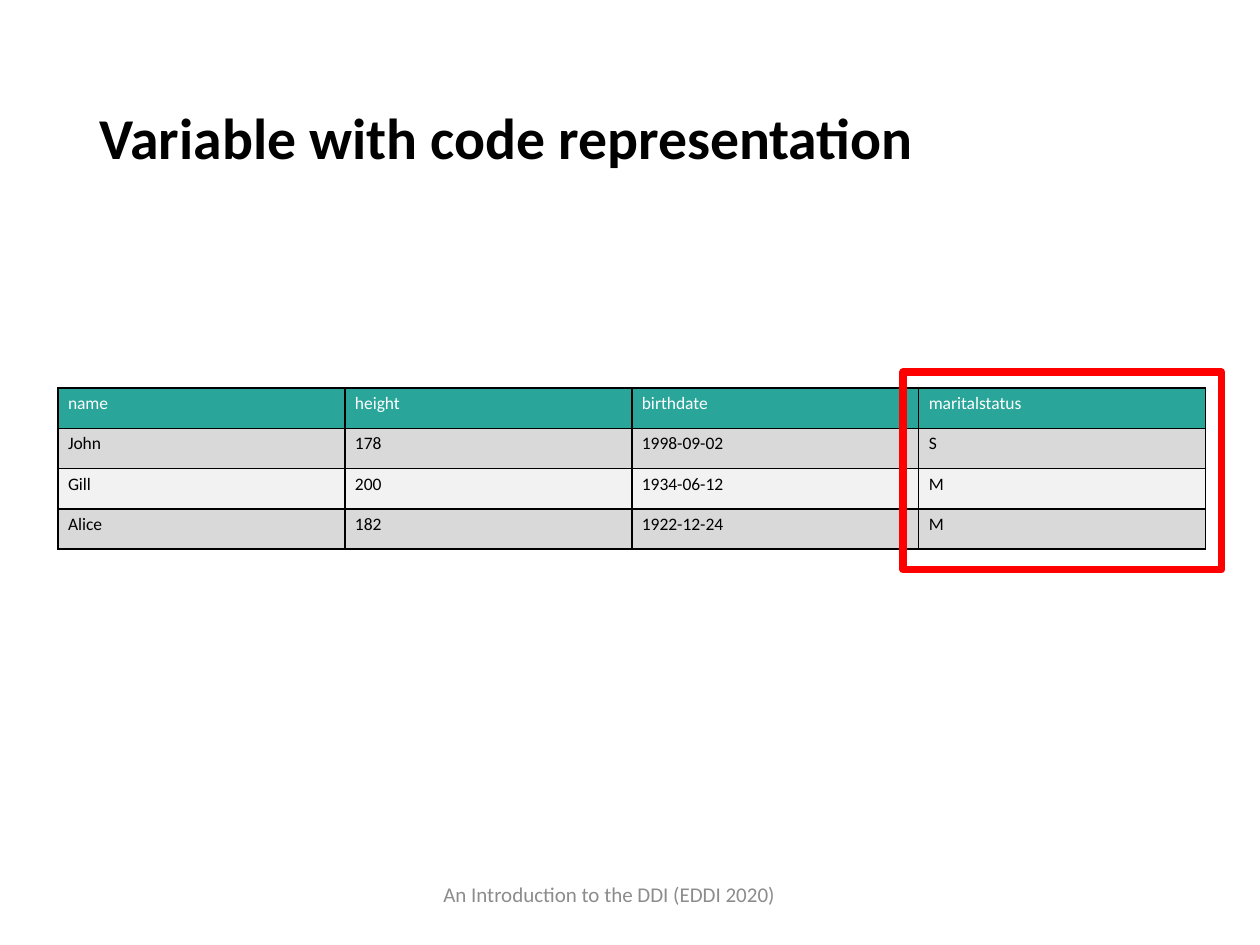
from typing import NamedTuple

from lxml import etree
from pptx import Presentation, util as u
from pptx.dml.color import RGBColor
from pptx.enum import shapes, text
from pptx.oxml import ns

BLACK = RGBColor(0x00, 0x00, 0x00)
WHITE = RGBColor(0xFF, 0xFF, 0xFF)
TEAL = RGBColor(0x29, 0xA5, 0x99)
DARK_BAND = RGBColor(0xD9, 0xD9, 0xD9)
LIGHT_BAND = RGBColor(0xF2, 0xF2, 0xF2)
RED = RGBColor(0xFF, 0x00, 0x00)
FOOTER_GREY = RGBColor(0x8C, 0x8C, 0x8C)

FONT = "Calibri"
UNIT = u.Inches(0.1)  # the slide is a grid of 100 columns by 75 rows
GRID_COLUMNS, GRID_ROWS = 100, 75

RECORDS = [
    ["name", "height", "birthdate", "maritalstatus"],
    ["John", "178", "1998-09-02", "S"],
    ["Gill", "200", "1934-06-12", "M"],
    ["Alice", "182", "1922-12-24", "M"],
]


class Box(NamedTuple):
    """An area of the slide in grid units."""
    left: float
    top: float
    width: float
    height: float

    def emu(self):
        return [round(length * UNIT) for length in self]


TITLE_BOX = Box(6.9, 3.9, 86.6, 14.5)
TABLE_BOX = Box(4.6, 30.8, 91.1, 12.8)
FOOTER_BOX = Box(34.2, 69.5, 31.7, 4)


def add_run(paragraph, words, size, color, bold=False):
    run = paragraph.add_run()
    run.text = words
    run.font.name = FONT
    run.font.size = u.Pt(size)
    run.font.bold = bold
    run.font.color.rgb = color


def place_title(slide, box):
    title = slide.shapes.title
    title.left, title.top, title.width, title.height = box.emu()
    frame = title.text_frame
    frame.auto_size = text.MSO_AUTO_SIZE.NONE
    frame.vertical_anchor = text.MSO_ANCHOR.MIDDLE
    paragraph = frame.paragraphs[0]
    paragraph.alignment = text.PP_ALIGN.LEFT
    paragraph.line_spacing = 0.9
    add_run(paragraph, "Variable with code representation", 33, BLACK, bold=True)


def add_borders(cell):
    """Draw thin black lines on all sides; they must precede the cell's fill."""
    properties = cell._tc.get_or_add_tcPr()
    for index, side in enumerate(("lnL", "lnR", "lnT", "lnB")):
        line = etree.Element(ns.qn(f"a:{side}"), w=str(u.Pt(1)))
        fill = etree.SubElement(line, ns.qn("a:solidFill"))
        etree.SubElement(fill, ns.qn("a:srgbClr"), val=str(BLACK))
        properties.insert(index, line)


def place_table(slide, box, records):
    row_count, column_count = len(records), len(records[0])
    table = slide.shapes.add_table(row_count, column_count, *box.emu()).table
    for row_index, record in enumerate(records):
        if row_index == 0:
            fill, color = TEAL, WHITE
        else:
            fill, color = (DARK_BAND if row_index % 2 else LIGHT_BAND), BLACK
        for column_index, value in enumerate(record):
            cell = table.cell(row_index, column_index)
            cell.margin_left = cell.margin_right = u.Inches(0.08)
            cell.margin_top = cell.margin_bottom = u.Inches(0.04)
            cell.fill.solid()
            cell.fill.fore_color.rgb = fill
            add_borders(cell)
            add_run(cell.text_frame.paragraphs[0], value, 10, color)


def highlight_last_column(slide, box, column_count):
    """Frame the last column of the table that fills the box."""
    column_width = box.width / column_count
    margin, bottom_margin = 1.25, 1.6
    area = Box(box.left + box.width - column_width - margin,
               box.top - margin,
               column_width + 2 * margin,
               box.height + margin + bottom_margin)
    frame = slide.shapes.add_shape(shapes.MSO_SHAPE.RECTANGLE, *area.emu())
    frame.shadow.inherit = False
    frame.fill.background()
    frame.line.color.rgb = RED
    frame.line.width = u.Pt(4.5)


def place_footer(slide, box):
    frame = slide.shapes.add_textbox(*box.emu()).text_frame
    frame.word_wrap = True
    add_run(frame.paragraphs[0], "An Introduction to the DDI (EDDI 2020)", 12, FOOTER_GREY)


def main():
    presentation = Presentation()
    presentation.slide_width = GRID_COLUMNS * UNIT
    presentation.slide_height = GRID_ROWS * UNIT
    title_only = presentation.slide_layouts.get_by_name("Title Only")
    slide = presentation.slides.add_slide(title_only)
    place_title(slide, TITLE_BOX)
    place_table(slide, TABLE_BOX, RECORDS)
    highlight_last_column(slide, TABLE_BOX, len(RECORDS[0]))
    place_footer(slide, FOOTER_BOX)
    presentation.save("out.pptx")


if __name__ == "__main__":
    main()
